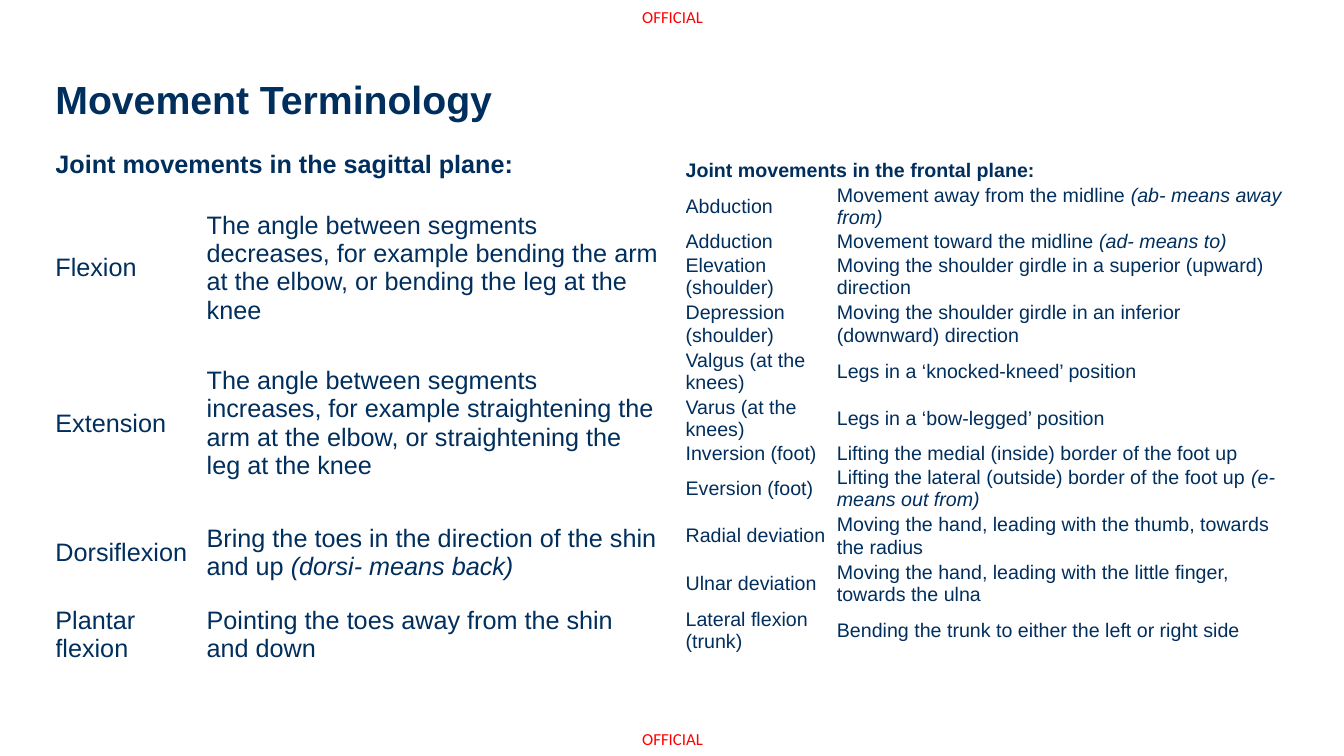
import pptx
import pptx.util
import pptx.dml.color
import pptx.enum.text
from dataclasses import dataclass

Inches = pptx.util.Inches
ANCHOR = pptx.enum.text.MSO_ANCHOR


@dataclass(frozen=True)
class Theme:
    navy: str = "002E5D"
    red: str = "FF0000"
    body_font: str = "Arial"
    marking_font: str = "Calibri"
    title_size: int = 28
    sagittal_size: int = 18
    frontal_size: int = 14
    marking_size: int = 12


THEME = Theme()
TITLE = "Movement Terminology"
MARKING = "OFFICIAL"
MARKING_TOPS = (0.07, 7.23)
COLUMN_WIDTHS = (1.5, 4.48)

SAGITTAL = [
    ("Flexion", "The angle between segments decreases, for example bending the arm at the elbow, or bending the leg at the knee"),
    ("Extension", "The angle between segments increases, for example straightening the arm at the elbow, or straightening the leg at the knee"),
    ("Dorsiflexion", "Bring the toes in the direction of the shin and up ", "(dorsi- means back)"),
    ("Plantar flexion", "Pointing the toes away from the shin and down"),
]
FRONTAL = [
    ("Abduction", "Movement away from the midline ", "(ab- means away from)"),
    ("Adduction", "Movement toward the midline ", "(ad- means to)"),
    ("Elevation (shoulder)", "Moving the shoulder girdle in a superior (upward) direction"),
    ("Depression (shoulder)", "Moving the shoulder girdle in an inferior (downward) direction"),
    ("Valgus (at the knees)", "Legs in a ‘knocked-kneed’ position"),
    ("Varus (at the knees)", "Legs in a ‘bow-legged’ position"),
    ("Inversion (foot)", "Lifting the medial (inside) border of the foot up"),
    ("Eversion (foot)", "Lifting the lateral (outside) border of the foot up ", "(e- means out from)"),
    ("Radial deviation", "Moving the hand, leading with the thumb, towards the radius"),
    ("Ulnar deviation", "Moving the hand, leading with the little finger, towards the ulna"),
    ("Lateral flexion (trunk)", "Bending the trunk to either the left or right side"),
]
TABLES = [
    {
        "heading": "Joint movements in the sagittal plane:",
        "entries": SAGITTAL,
        "corner": (0.55, 1.38),
        "size": THEME.sagittal_size,
        "heights": [0.51, 1.54, 1.54, 1.03, 0.51],
    },
    {
        "heading": "Joint movements in the frontal plane:",
        "entries": FRONTAL,
        "corner": (6.8, 1.58),
        "size": THEME.frontal_size,
        "heights": [0.23, 0.45, 0.23] + [0.45] * 4 + [0.23] + [0.45] * 4,
    },
]


def write(para, size, font, color, text, note="", bold=False):
    para.font.size = pptx.util.Pt(size)
    para.font.name = font
    para.font.bold = bold
    para.font.color.rgb = pptx.dml.color.RGBColor.from_string(color)
    para.add_run().text = text
    if note:
        span = para.add_run()
        span.text = note
        span.font.italic = True


def clear_margins(holder):
    holder.margin_left = holder.margin_right = 0
    holder.margin_top = holder.margin_bottom = 0


def add_text(page, bounds, wrap):
    box = page.shapes.add_textbox(*map(Inches, bounds))
    frame = box.text_frame
    clear_margins(frame)
    frame.word_wrap = wrap
    frame.vertical_anchor = ANCHOR.TOP
    return frame


def fill_cell(cell, size, text, note="", bold=False):
    clear_margins(cell)
    cell.vertical_anchor = ANCHOR.MIDDLE
    cell.fill.background()
    if text:
        write(cell.text_frame.paragraphs[0], size, THEME.body_font, THEME.navy, text, note, bold)


def add_terms(page, heading, entries, corner, size, heights):
    left, top = corner
    table = page.shapes.add_table(
        len(heights), len(COLUMN_WIDTHS), Inches(left), Inches(top),
        Inches(sum(COLUMN_WIDTHS)), Inches(sum(heights)),
    ).table
    table.first_row = table.horz_banding = False
    for column, width in zip(table.columns, COLUMN_WIDTHS):
        column.width = Inches(width)
    for row, height in zip(table.rows, heights):
        row.height = Inches(height)
    table.cell(0, 0).merge(table.cell(0, 1))
    fill_cell(table.cell(0, 0), size, heading, bold=True)
    fill_cell(table.cell(0, 1), size, "")
    for index, (term, *meaning) in enumerate(entries, 1):
        fill_cell(table.cell(index, 0), size, term)
        fill_cell(table.cell(index, 1), size, *meaning)


def main():
    deck = pptx.Presentation()
    deck.slide_width, deck.slide_height = Inches(13.33), Inches(7.5)
    page = deck.slides.add_slide(deck.slide_layouts[6])
    for top in MARKING_TOPS:
        frame = add_text(page, (6.37, top, 0.64, 0.2), False)
        frame.auto_size = pptx.enum.text.MSO_AUTO_SIZE.SHAPE_TO_FIT_TEXT
        write(frame.paragraphs[0], THEME.marking_size, THEME.marking_font, THEME.red, MARKING)
    title = add_text(page, (0.55, 0.8, 7.3, 0.79), True).paragraphs[0]
    title.line_spacing = 0.9
    write(title, THEME.title_size, THEME.body_font, THEME.navy, TITLE, bold=True)
    for terms in TABLES:
        add_terms(page, **terms)
    deck.save("out.pptx")


if __name__ == "__main__":
    main()
